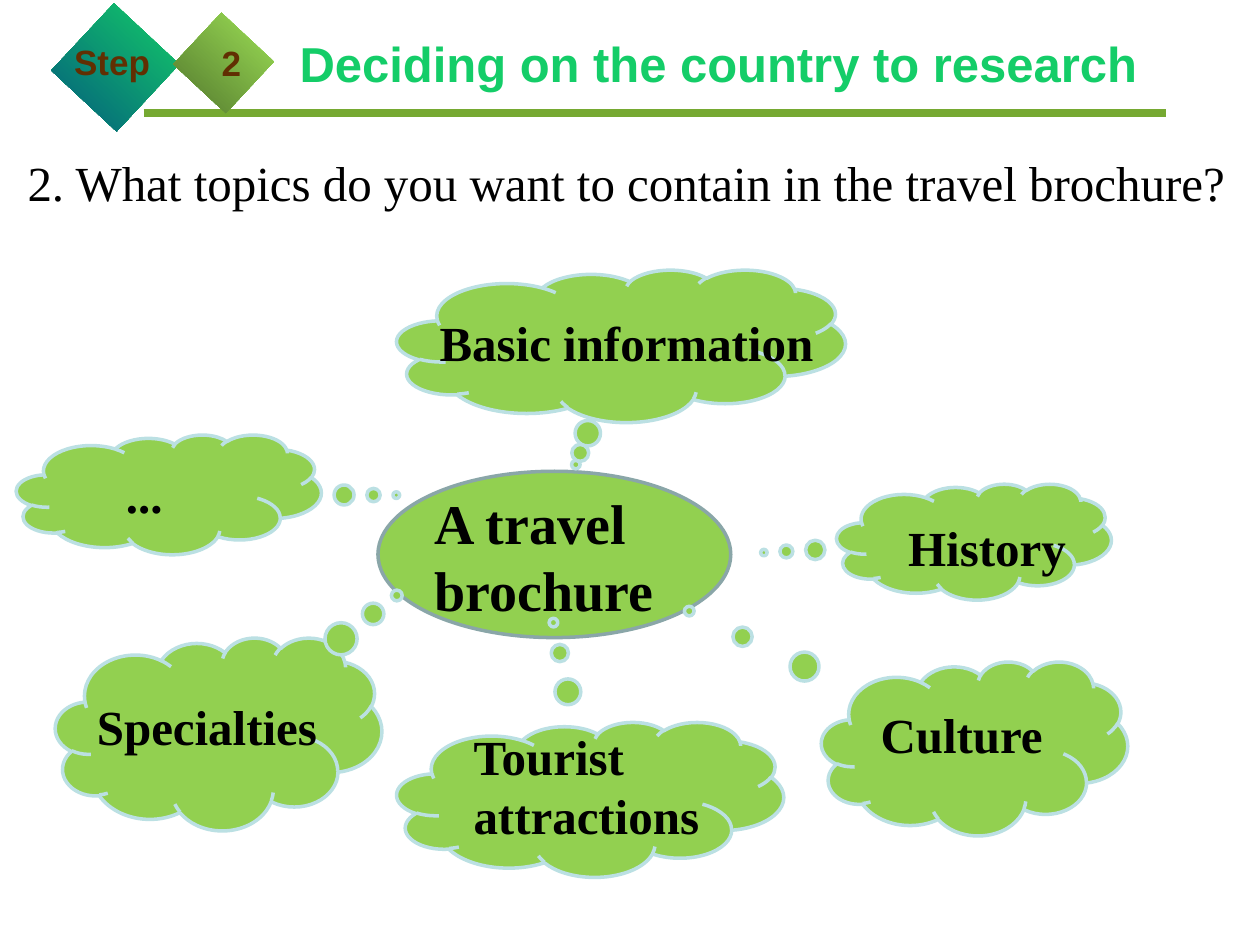
from lxml import etree
from pptx import Presentation
from pptx import util as u
from pptx.dml.color import RGBColor
from pptx.enum import shapes
from pptx.oxml.ns import qn

BLACK = RGBColor(0x00, 0x00, 0x00)
BROWN = RGBColor(0x61, 0x2F, 0x02)
RULE_GREEN = RGBColor(0x76, 0xA9, 0x32)
BRIGHT_GREEN = RGBColor(0x14, 0xCD, 0x68)
DARK_GREEN = RGBColor(0x0B, 0x6E, 0x38)
TEAL = RGBColor(0x03, 0x5C, 0x7D)
LIME = RGBColor(0x9E, 0xE2, 0x56)
OLIVE = RGBColor(0x52, 0x76, 0x2D)
CLOUD_GREEN = RGBColor(0x92, 0xD0, 0x50)
PALE_BLUE = RGBColor(0xBB, 0xE0, 0xE3)
GREY_BLUE = RGBColor(0x8A, 0xA6, 0xA8)

HEADING_FONT = "Arial"
BODY_FONT = "Times New Roman"


class SlideBuilder:
    def __init__(self, page):
        self.page = page

    def gradient(self, fill, colors, angle):
        fill.gradient()
        fill.gradient_angle = angle
        for stop, color in zip(fill.gradient_stops, colors):
            stop.color.rgb = color

    def rule(self, left, right, top, color, width):
        line = self.page.shapes.add_connector(
            shapes.MSO_CONNECTOR.STRAIGHT,
            u.Inches(left), u.Inches(top), u.Inches(right), u.Inches(top))
        line.line.color.rgb = color
        line.line.width = u.Pt(width)
        etree.SubElement(line._element.spPr, qn("a:effectLst"))

    def shape(self, kind, area):
        shape = self.page.shapes.add_shape(kind, *map(u.Inches, area))
        shape.shadow.inherit = False
        return shape

    def diamond(self, area, colors):
        diamond = self.shape(shapes.MSO_SHAPE.RECTANGLE, area)
        diamond.rotation = 43
        diamond.line.fill.background()
        self.gradient(diamond.fill, colors, 270)

    def bubble(self, kind, area, outline):
        bubble = self.shape(kind, area)
        bubble.fill.solid()
        bubble.fill.fore_color.rgb = CLOUD_GREEN
        bubble.line.color.rgb = outline
        bubble.line.width = u.Pt(2)
        return bubble

    def cloud(self, area, tail):
        cloud = self.bubble(shapes.MSO_SHAPE.CLOUD_CALLOUT, area, PALE_BLUE)
        for index, value in enumerate(tail):
            cloud.adjustments[index] = value

    def text(self, area, words, size=28, font=BODY_FONT, color=BLACK,
             bold=True, wrap=True):
        box = self.page.shapes.add_textbox(*map(u.Inches, area))
        box.text_frame.word_wrap = wrap
        para = box.text_frame.paragraphs[0]
        span = para.add_run()
        span.text = words
        span.font.name = font
        span.font.size = u.Pt(size)
        span.font.bold = bold
        if isinstance(color, list):
            self.gradient(span.font.fill, color, 0)
        else:
            span.font.color.rgb = color


def main():
    deck = Presentation()
    deck.slide_width = u.Inches(10)
    deck.slide_height = u.Inches(7.5)
    builder = SlideBuilder(deck.slides.add_slide(deck.slide_layouts[6]))

    builder.rule(1.14, 9.25, 0.9, RULE_GREEN, 4.5)
    builder.diamond((0.56, 0.17, 0.71, 0.73), [BRIGHT_GREEN, TEAL])
    builder.text((2.28, 0.22, 7.2, 0.57), "Deciding on the country to research",
                 font=HEADING_FONT, color=[BRIGHT_GREEN, DARK_GREEN])
    builder.diamond((1.49, 0.22, 0.57, 0.56), [LIME, OLIVE])
    builder.text((1.66, 0.28, 0.42, 0.44), "2", 20, HEADING_FONT, BROWN)
    builder.text((0.49, 0.27, 0.8, 0.44), "Step", 20, HEADING_FONT, BROWN,
                 wrap=False)
    builder.text((0.12, 1.16, 9.91, 1.04),
                 "2. What topics do you want to contain in the travel brochure?",
                 bold=False)

    builder.bubble(shapes.MSO_SHAPE.OVAL, (3, 3.74, 2.8, 1.32), GREY_BLUE)
    builder.text((3.35, 3.83, 2.3, 1.18), "A travel brochure", 32)

    topics = [
        ("History", (6.64, 3.84, 2.18, 0.92), (-0.765, 0.093),
         (7.11, 4.06, 1.84, 0.57)),
        ("Basic information", (3.15, 2.14, 3.56, 1.21), (-0.101, 0.779),
         (3.39, 2.43, 3.38, 0.57)),
        ("Culture", (6.52, 5.25, 2.43, 1.38), (-0.932, -0.79),
         (6.89, 5.54, 1.64, 0.57)),
        ("Tourist attractions", (3.15, 5.73, 3.07, 1.23), (-0.095, -1.141),
         (3.66, 5.72, 2.38, 1.04)),
        ("...", (0.13, 3.45, 2.42, 0.95), (0.746, 0.005),
         (0.9, 3.64, 1.15, 0.57)),
        ("Specialties", (0.44, 5.06, 2.59, 1.53), (0.546, -0.718),
         (0.67, 5.48, 1.98, 0.57)),
    ]
    for words, cloud_area, tail, text_area in topics:
        builder.cloud(cloud_area, tail)
        builder.text(text_area, words)

    deck.save("out.pptx")


if __name__ == "__main__":
    main()
